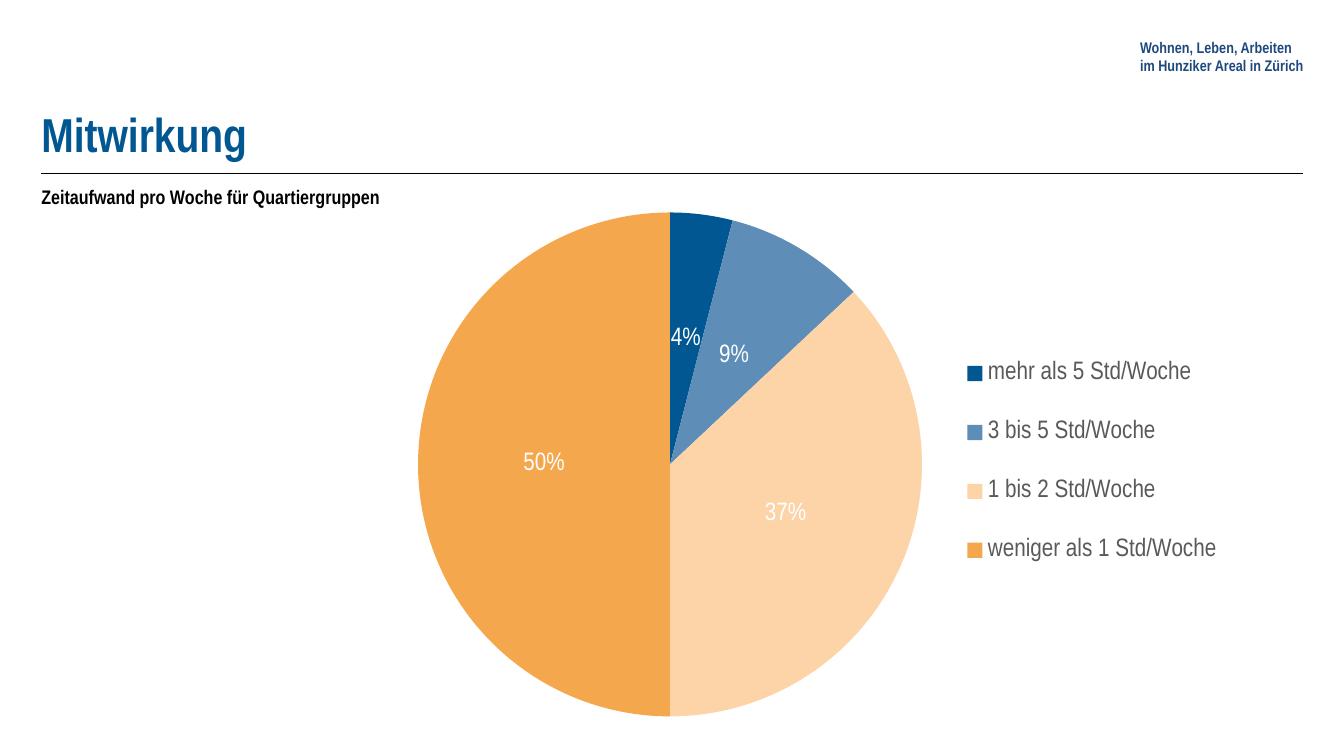
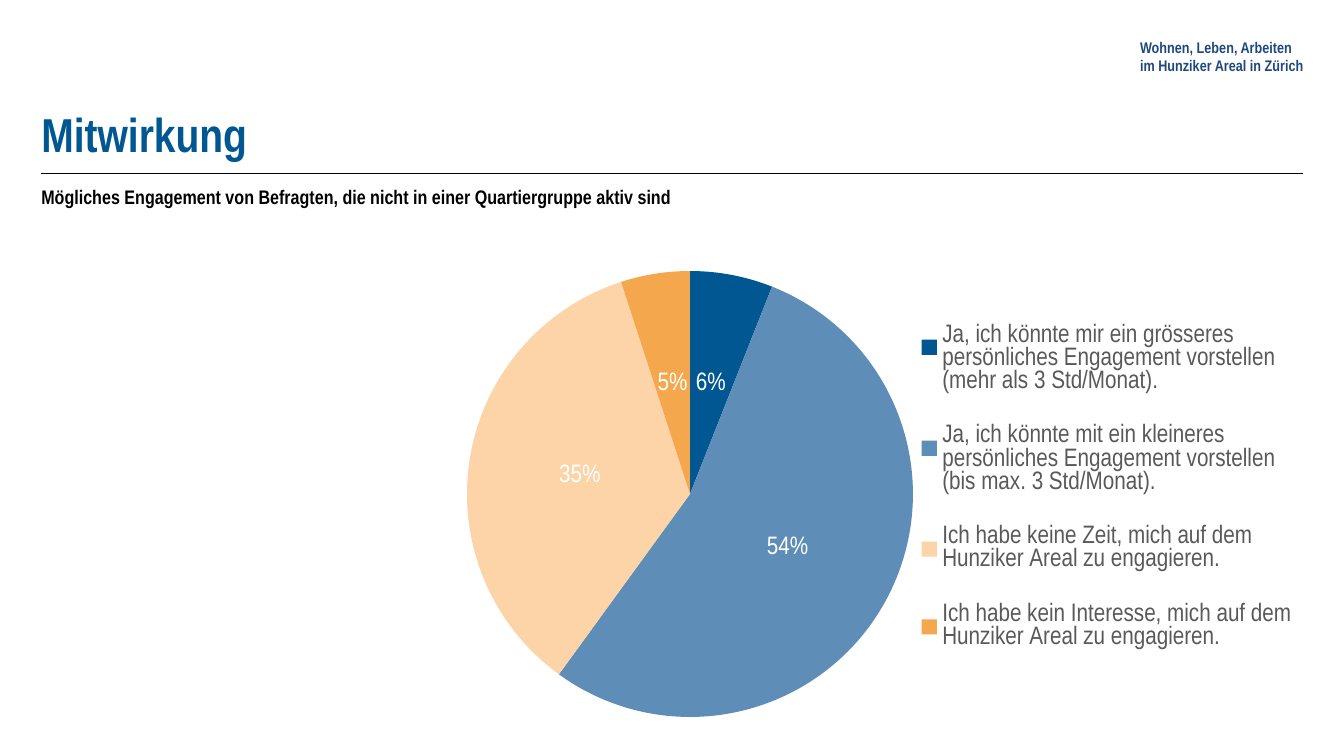
"""Build two slides with pie charts on participation in the neighbourhood."""
from lxml import etree
from pptx import Presentation
from pptx.chart.data import CategoryChartData
from pptx.dml.color import RGBColor
from pptx.enum.chart import XL_CHART_TYPE, XL_LABEL_POSITION, XL_LEGEND_POSITION
from pptx.enum.shapes import MSO_CONNECTOR
from pptx.enum.text import MSO_ANCHOR, MSO_AUTO_SIZE, PP_ALIGN
from pptx.oxml.ns import qn
from pptx.util import Pt

PIE = XL_CHART_TYPE.PIE
CENTER_LABEL = XL_LABEL_POSITION.CENTER
LEGEND_RIGHT = XL_LEGEND_POSITION.RIGHT
STRAIGHT = MSO_CONNECTOR.STRAIGHT
TOP, MIDDLE, BOTTOM = MSO_ANCHOR.TOP, MSO_ANCHOR.MIDDLE, MSO_ANCHOR.BOTTOM
LEFT = PP_ALIGN.LEFT
FIXED_SIZE = MSO_AUTO_SIZE.NONE

FONT = "Arial Narrow"
BLUE = RGBColor(0x00, 0x57, 0x91)
LIGHT_BLUE = RGBColor(0x5E, 0x8D, 0xB8)
PEACH = RGBColor(0xFC, 0xD4, 0xA8)
ORANGE = RGBColor(0xF5, 0xA7, 0x4D)
NAVY = RGBColor(0x1F, 0x49, 0x7D)
GREY = RGBColor(0x59, 0x59, 0x59)
BLACK = RGBColor(0, 0, 0)
WHITE = RGBColor(0xFF, 0xFF, 0xFF)
SLICE_COLORS = (BLUE, LIGHT_BLUE, PEACH, ORANGE)

MARGIN, CONTENT_WIDTH, RULE_Y = 29.5, 901.5, 123.8
HEADER_BOX = (814.3, 25.2, 134, 30.2)
TITLE_BOX = (MARGIN, 25.9, CONTENT_WIDTH, 90)
SUBTITLE_BOX = (MARGIN, 131.8, CONTENT_WIDTH, 19.4)

HEADER = "Wohnen, Leben, Arbeiten\nim Hunziker Areal in Zürich"
TITLE = "Mitwirkung"
SLIDES = [
    {
        "subtitle": "Zeitaufwand pro Woche für Quartiergruppen",
        "shares": [
            ("mehr als 5 Std/Woche", 0.04),
            ("3 bis 5 Std/Woche", 0.09),
            ("1 bis 2 Std/Woche", 0.37),
            ("weniger als 1 Std/Woche", 0.5),
        ],
        "chart": (211, 141.8, 731.5, 379.4),
        "pie": (298.6, 151.8, 360, 360),
        "legend": (684, 233, 192, 194),
    },
    {
        "subtitle": "Mögliches Engagement von Befragten, die nicht in einer "
                    "Quartiergruppe aktiv sind",
        "shares": [
            ("Ja, ich könnte mir ein grösseres persönliches Engagement "
             "vorstellen (mehr als 3 Std/Monat).", 0.06),
            ("Ja, ich könnte mit ein kleineres persönliches Engagement "
             "vorstellen (bis max. 3 Std/Monat).", 0.54),
            ("Ich habe keine Zeit, mich auf dem Hunziker Areal zu engagieren.", 0.35),
            ("Ich habe kein Interesse, mich auf dem Hunziker Areal zu engagieren.", 0.05),
        ],
        "chart": (218.9, 183.6, 819.4, 339.1),
        "pie": (333.6, 193.6, 318.6, 318.6),
        "legend": (657, 209, 267, 278),
    },
]


def style_font(font, size, color, bold=False):
    font.name, font.size, font.bold = FONT, Pt(size), bold
    font.color.rgb = color


def fill_text(holder, box, text, size, color, anchor, inset_y=0):
    holder.left, holder.top, holder.width, holder.height = map(Pt, box)
    frame = holder.text_frame
    frame.text = text
    frame.word_wrap = True
    frame.auto_size = FIXED_SIZE
    frame.vertical_anchor = anchor
    frame.margin_left = frame.margin_right = 0
    frame.margin_top = frame.margin_bottom = Pt(inset_y)
    for paragraph in frame.paragraphs:
        paragraph.alignment = LEFT
        for run in paragraph.runs:
            style_font(run.font, size, color, bold=True)


def remove_bullet(paragraph):
    properties = paragraph._p.get_or_add_pPr()
    properties.set("marL", "0")
    properties.set("indent", "0")
    etree.SubElement(properties, qn("a:buNone"))


def add_frame(slide, subtitle):
    header = slide.shapes.add_textbox(*map(Pt, HEADER_BOX))
    fill_text(header, HEADER_BOX, HEADER, 11, NAVY, MIDDLE, inset_y=7.2)
    fill_text(slide.shapes.title, TITLE_BOX, TITLE, 34, BLUE, BOTTOM)
    body = slide.placeholders[1]
    fill_text(body, SUBTITLE_BOX, subtitle, 14, BLACK, TOP)
    remove_bullet(body.text_frame.paragraphs[0])
    rule = slide.shapes.add_connector(
        STRAIGHT, Pt(MARGIN), Pt(RULE_Y), Pt(MARGIN + CONTENT_WIDTH), Pt(RULE_Y))
    rule.line.color.rgb = BLACK
    rule.line.width = Pt(1)
    etree.SubElement(rule._element.spPr, qn("a:effectLst"))


def place_part(parent, index, box, chart_box, inner=False):
    """Position a chart part by fractions of the chart area."""
    for old in parent.findall(qn("c:layout")):
        parent.remove(old)
    layout = etree.Element(qn("c:layout"))
    manual = etree.SubElement(layout, qn("c:manualLayout"))
    left, top, width, height = chart_box
    settings = [("layoutTarget", "inner")] if inner else []
    settings += [
        ("xMode", "edge"), ("yMode", "edge"),
        ("x", (box[0] - left) / width), ("y", (box[1] - top) / height),
        ("w", box[2] / width), ("h", box[3] / height),
    ]
    for tag, value in settings:
        etree.SubElement(manual, qn(f"c:{tag}")).set("val", str(value))
    parent.insert(index, layout)


def add_pie(slide, content):
    data = CategoryChartData(number_format="0%")
    data.categories = [answer for answer, _ in content["shares"]]
    data.add_series("Series 1", [share for _, share in content["shares"]])
    chart = slide.shapes.add_chart(PIE, *map(Pt, content["chart"]), data).chart
    chart.has_title = False
    style_font(chart.font, 10, BLACK)
    chart.has_legend = True
    chart.legend.position = LEGEND_RIGHT
    chart.legend.include_in_layout = False
    style_font(chart.legend.font, 18, GREY)

    plot = chart.plots[0]
    plot.vary_by_categories = True
    for index, color in enumerate(SLICE_COLORS):
        fill = plot.series[0].points[index].format.fill
        fill.solid()
        fill.fore_color.rgb = color
    plot.has_data_labels = True
    labels = plot.data_labels
    labels.show_value, labels.show_percentage = True, False
    labels.number_format, labels.number_format_is_linked = "0%", False
    labels.position = CENTER_LABEL
    style_font(labels.font, 18, WHITE)

    chart_xml = chart._chartSpace.chart
    place_part(chart_xml.plotArea, 0, content["pie"], content["chart"], inner=True)
    place_part(chart_xml.find(qn("c:legend")), 1, content["legend"], content["chart"])


def main():
    deck = Presentation()
    deck.slide_width, deck.slide_height = Pt(960), Pt(540)
    for content in SLIDES:
        slide = deck.slides.add_slide(deck.slide_layouts[1])
        add_pie(slide, content)
        add_frame(slide, content["subtitle"])
    deck.save("out.pptx")


if __name__ == "__main__":
    main()
